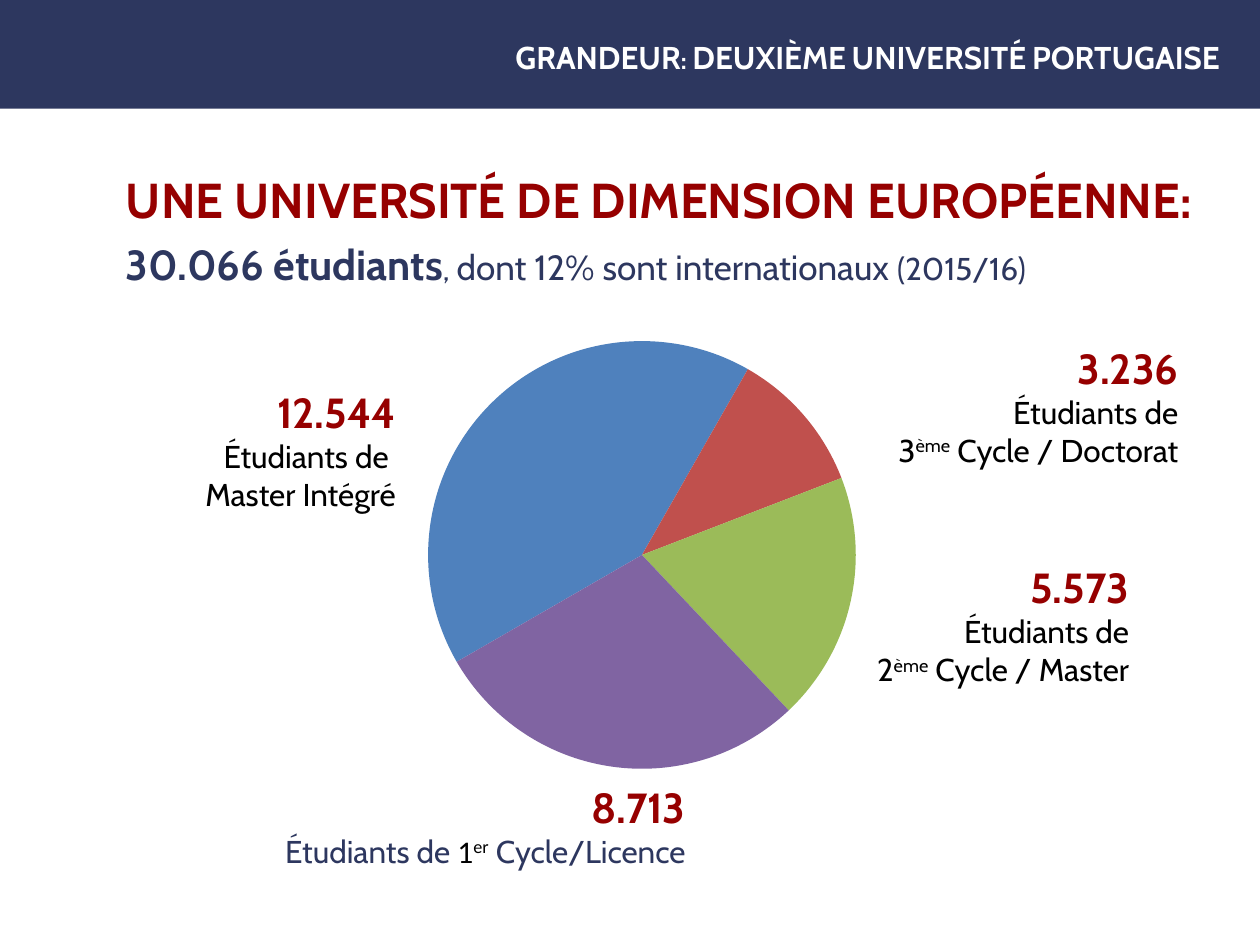
import pptx
import pptx.chart.data
import pptx.dml.color
import pptx.enum.chart
import pptx.enum.shapes
import pptx.enum.text
import pptx.oxml
import pptx.util

RGBColor = pptx.dml.color.RGBColor
NAVY = RGBColor(0x2D, 0x37, 0x5F)
CRIMSON = RGBColor(0x96, 0x00, 0x00)
BLACK = RGBColor(0x00, 0x00, 0x00)
WHITE = RGBColor(0xFF, 0xFF, 0xFF)
SLICES = (
    (42, RGBColor(0x4F, 0x81, 0xBD)),
    (11, RGBColor(0xC0, 0x50, 0x4D)),
    (19, RGBColor(0x9B, 0xBB, 0x59)),
    (29, RGBColor(0x80, 0x64, 0xA2)),
)
WIDTH, HEIGHT = pptx.util.Inches(10), pptx.util.Inches(7.5)
RIGHT = pptx.enum.text.PP_ALIGN.RIGHT
SUPERSCRIPT = {"baseline": "30000"}
LAYOUT = (
    '<c:layout xmlns:c="http://schemas.openxmlformats.org/drawingml/2006/chart">'
    '<c:manualLayout><c:layoutTarget val="inner"/><c:xMode val="edge"/><c:yMode val="edge"/>'
    '<c:x val="0.19"/><c:y val="0.04"/><c:w val="0.62"/><c:h val="0.92"/>'
    "</c:manualLayout></c:layout>"
)


def share(left, top, width, height):
    """Turn percentages of the slide's size into lengths."""
    return [int(part * side / 100) for part, side in
            zip((left, top, width, height), (WIDTH, HEIGHT) * 2)]


def style(font, size=None, color=None, bold=None, name=None):
    """Set the given properties of a font."""
    if size:
        font.size = pptx.util.Pt(size)
    if color is not None:
        font.color.rgb = color
    if bold is not None:
        font.bold = bold
    if name:
        font.name = name


def add_box(page, area, wrap=True):
    """Add a text box that grows with its text and return its frame."""
    frame = page.shapes.add_textbox(*share(*area)).text_frame
    frame.word_wrap = wrap
    frame.auto_size = pptx.enum.text.MSO_AUTO_SIZE.SHAPE_TO_FIT_TEXT
    return frame


def add_para(frame, spans, size, color, bold=False, align=None, spacing=None):
    """Fill the first or a new paragraph with (text, font changes, attributes) spans."""
    para = frame.paragraphs[0] if not frame.text else frame.add_paragraph()
    para.alignment = align
    para.line_spacing = spacing
    style(para.font, size, color, bold, "Cabin")
    for text, changes, attributes in spans:
        span = para.add_run()
        span.text = text
        style(span.font, **changes)
        for key, value in attributes.items():
            span._r.get_or_add_rPr().set(key, value)


def add_label(page, area, number, lines, color=BLACK):
    """Add a right-aligned slice label: a bold number over its description."""
    frame = add_box(page, area)
    add_para(frame, [(number, {}, {})], 24, CRIMSON, True, RIGHT)
    for spans in lines:
        add_para(frame, spans, 18, color, align=RIGHT)


def add_header(page, title):
    """Add the top band and its title."""
    band = page.shapes.add_shape(pptx.enum.shapes.MSO_SHAPE.RECTANGLE, *share(0, 0, 100, 11.5))
    band.shadow.inherit = False
    band.fill.solid()
    band.fill.fore_color.rgb = NAVY
    band.line.fill.background()
    frame = add_box(page, (39.7, 3.33, 58.1, 5.33), wrap=False)
    add_para(frame, [(title, {}, {"cap": "small"})], 18, WHITE, True, RIGHT)


def add_heading(page):
    """Add the headline and the total number of students."""
    frame = add_box(page, (10, 14.8, 86.3, 16))
    frame.margin_left = frame.margin_top = frame.margin_right = frame.margin_bottom = 0
    add_para(frame, [("UNE UNIVERSITÉ DE DIMENSION EUROPÉENNE:", {}, {})],
             28, CRIMSON, True, spacing=1.5)
    add_para(frame, [
        ("30.066 étudiants", {"size": 24, "bold": True}, {}),
        (", ", {}, {}),
        ("dont 12% sont internationaux ", {"size": 20}, {}),
        ("(2015/16)", {}, {}),
    ], 18, NAVY, spacing=pptx.util.Pt(34.8))


def add_pie(page):
    """Add the pie of student shares by cycle."""
    data = pptx.chart.data.CategoryChartData()
    data.categories = [str(index) for index in range(1, len(SLICES) + 1)]
    data.add_series("Series 1", [value for value, _ in SLICES])
    chart = page.shapes.add_chart(
        pptx.enum.chart.XL_CHART_TYPE.PIE, *share(23.3, 34.13, 55.3, 49.2), data).chart
    chart.has_legend = chart.has_title = False
    style(chart.font, 18, BLACK, name="Calibri")
    plot = chart.plots[0]
    plot.vary_by_categories = True
    for index, (_, color) in enumerate(SLICES):
        look = plot.series[0].points[index].format
        look.fill.solid()
        look.fill.fore_color.rgb = color
        look.line.fill.background()
    area = chart._chartSpace.chart.plotArea
    for old in area.xpath("c:layout"):
        area.remove(old)
    area.insert(0, pptx.oxml.parse_xml(LAYOUT))
    pie = area.xpath("c:pieChart")[0]
    for old in pie.xpath("c:firstSliceAng"):
        pie.remove(old)
    pie.append(pptx.oxml.parse_xml(
        '<c:firstSliceAng xmlns:c="http://schemas.openxmlformats.org/drawingml/2006/chart"'
        ' val="240"/>'))


def add_cycle_label(page, area, number, cycle, name):
    """Add the label of a numbered cycle with a raised ordinal ending."""
    add_label(page, area, number, [
        [("Étudiants de", {}, {})],
        [(cycle, {}, {}), ("ème", {}, SUPERSCRIPT), (f" Cycle / {name}", {}, {})],
    ])


def main():
    """Build the slide and save it."""
    deck = pptx.Presentation()
    deck.slide_width, deck.slide_height = WIDTH, HEIGHT
    page = deck.slides.add_slide(deck.slide_layouts[6])
    add_heading(page)
    add_cycle_label(page, (57.9, 58.8, 32.7, 14.8), "5.573", "2", "Master")
    add_cycle_label(page, (49.5, 35.6, 45, 14.8), "3.236", "3", "Doctorat")
    add_label(page, (4.4, 40.27, 28, 14.8), "12.544",
              [[("Étudiants de ", {}, {})], [("Master Intégré", {}, {})]])
    add_pie(page)
    ordinal = {"name": "Calibri", "color": BLACK}
    add_label(page, (2, 82, 53.4, 10.8), "8.713", [[
        ("Étudiants de ", {}, {}),
        ("1", ordinal, {}),
        ("er", ordinal, SUPERSCRIPT),
        (" Cycle/Licence", {}, {}),
    ]], NAVY)
    add_header(page, "GRANDEUR: DEUXIÈME UNIVERSITÉ PORTUGAISE")
    deck.save("out.pptx")


if __name__ == "__main__":
    main()
